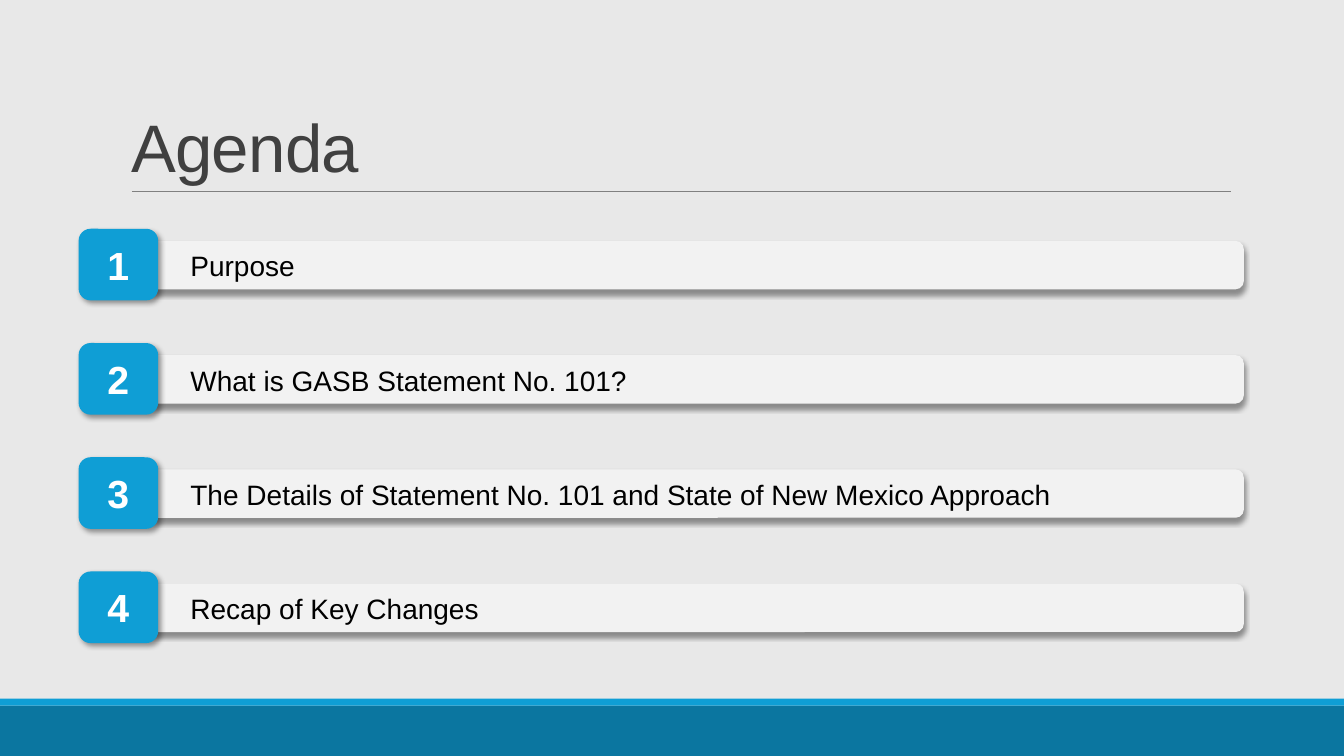
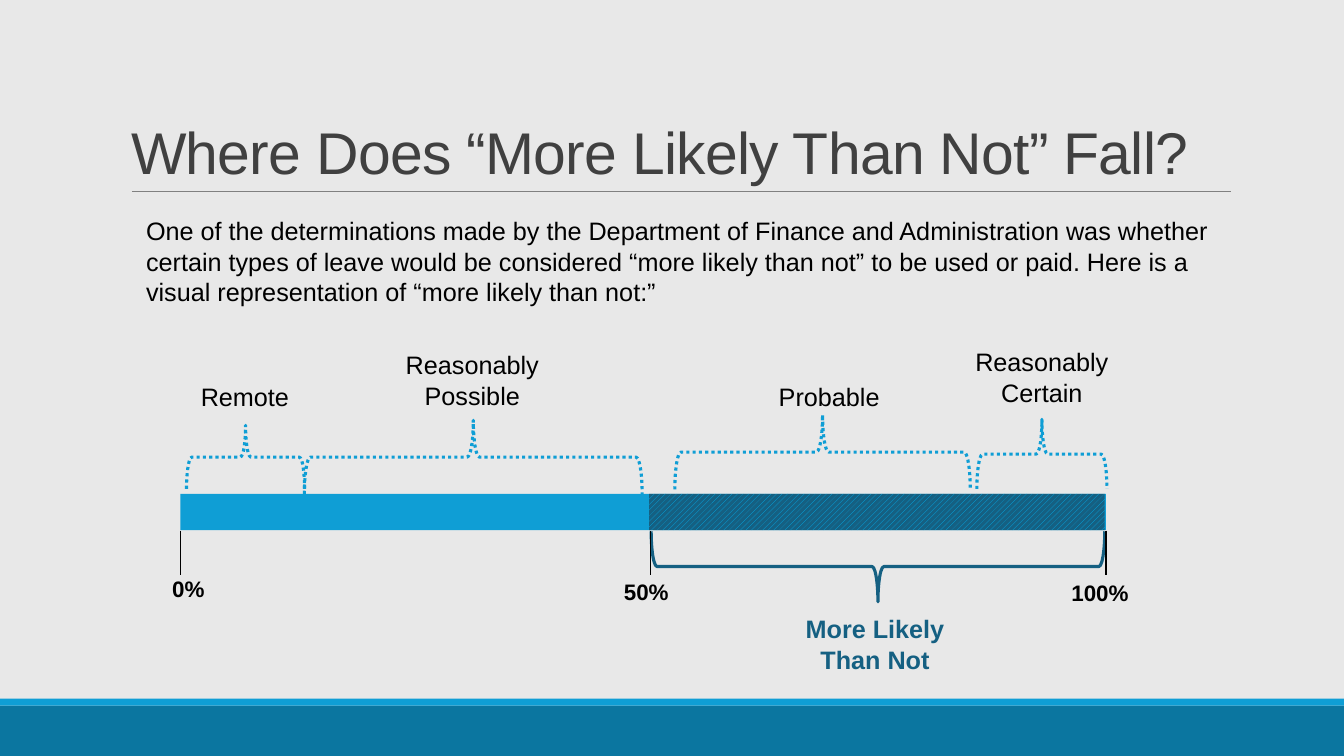
from dataclasses import dataclass

from lxml import etree
from pptx import Presentation
from pptx import util as u
from pptx.dml.color import RGBColor
from pptx.enum import dml, shapes, text
from pptx.oxml.ns import qn

SLIDE_WIDTH, SLIDE_HEIGHT = u.Inches(13.33), u.Inches(7.5)
FONT = "Arial"
BACKGROUND, PANEL, WHITE, BLACK = "E8E8E8", "F2F2F2", "FFFFFF", "000000"
BLUE, BAND_BLUE, DEEP_BLUE, HATCH_BLUE = "0F9ED5", "0B76A0", "156082", "00B0F0"
TITLE_GREY, RULE_GREY = "404040", "808080"
RECTANGLE = shapes.MSO_SHAPE.RECTANGLE
ROUNDED = shapes.MSO_SHAPE.ROUNDED_RECTANGLE
CENTER, LEFT = text.PP_ALIGN.CENTER, text.PP_ALIGN.LEFT


@dataclass(frozen=True)
class Box:
    """A frame in percent of the slide's width and height."""
    left: float
    top: float
    width: float
    height: float

    def emu(self) -> tuple:
        return (across(self.left), down(self.top),
                across(self.width), down(self.height))


@dataclass(frozen=True)
class AgendaItem:
    wording: str
    width: float = 35.78


@dataclass(frozen=True)
class Label:
    wording: str
    box: Box


@dataclass(frozen=True)
class Likelihood:
    """A span of the scale, marked by a brace and named by a label."""
    label: Label
    brace: Box
    color: str = BLUE
    points_down: bool = False


@dataclass(frozen=True)
class Tick:
    left: float
    label: Label


AGENDA_PITCH = 15.11
AGENDA = (
    AgendaItem("Purpose"),
    AgendaItem("What is GASB Statement No. 101?"),
    AgendaItem("The Details of Statement No. 101 and State of New Mexico Approach", 70.5),
    AgendaItem("Recap of Key Changes"),
)

INTRO = Label(
    "One of the determinations made by the Department of Finance and Administration "
    "was whether certain types of leave would be considered “more likely than not” to "
    "be used or paid. Here is a visual representation of “more likely than not:”",
    Box(10.13, 27.87, 81.08, 13.47))
SCALE = Box(13.43, 65.33, 68.85, 4.8)
UPPER_HALF = Box(48.3, 65.33, 33.9, 4.8)
TICK_TOP, TICK_BOTTOM = 70.2, 76
TICKS = (
    Tick(13.43, Label("0%", Box(12.08, 75.47, 4.65, 4.93))),
    Tick(48.38, Label("50%", Box(45.68, 75.87, 5.55, 4.93))),
    Tick(82.28, Label("100%", Box(78.98, 76, 6.45, 4.93))),
)
LIKELIHOODS = (
    Likelihood(Label("Remote", Box(13.8, 49.73, 8.85, 5.33)),
               Box(13.88, 56.27, 8.78, 8.4)),
    Likelihood(Label("Reasonably Possible", Box(28.8, 45.6, 12.68, 9.47)),
               Box(22.65, 55.6, 25.13, 9.73)),
    Likelihood(Label("Probable", Box(55.58, 49.73, 12.23, 5.33)),
               Box(50.21, 54.87, 21.98, 9.87)),
    Likelihood(Label("Reasonably Certain", Box(70.05, 45.2, 14.93, 9.47)),
               Box(72.68, 55.47, 9.68, 9.2)),
    Likelihood(Label("More Likely Than Not", Box(58.73, 80.53, 12.75, 9.47)),
               Box(48.45, 70.27, 33.75, 9.33), DEEP_BLUE, points_down=True),
)


def across(share: float) -> int:
    return round(SLIDE_WIDTH * share / 100)


def down(share: float) -> int:
    return round(SLIDE_HEIGHT * share / 100)


def rgb(color: str) -> RGBColor:
    return RGBColor.from_string(color)


def write(shape, wording: str, size: float, color: str = BLACK,
          bold: bool = False, align=LEFT, anchor=text.MSO_ANCHOR.TOP):
    """Set the shape's only paragraph and return its span."""
    frame = shape.text_frame
    frame_format = {"word_wrap": True, "vertical_anchor": anchor,
                    "auto_size": text.MSO_AUTO_SIZE.NONE}
    for name, value in frame_format.items():
        setattr(frame, name, value)
    para = frame.paragraphs[0]
    para.alignment = align
    span = para.add_run()
    span.text = wording
    font_format = {"name": FONT, "size": u.Pt(size), "bold": bold}
    for name, value in font_format.items():
        setattr(span.font, name, value)
    span.font.color.rgb = rgb(color)
    return span


def add_label(page, label: Label, size: float, **style) -> None:
    write(page.shapes.add_textbox(*label.box.emu()), label.wording, size, **style)


def add_block(page, kind, box: Box, color: str):
    """Add a filled shape with no outline and no shadow."""
    block = page.shapes.add_shape(kind, *box.emu())
    block.shadow.inherit = False
    block.fill.solid()
    block.fill.fore_color.rgb = rgb(color)
    block.line.fill.background()
    return block


def add_shadow(block, angle: int) -> None:
    effects = block._element.spPr.find(qn("a:effectLst"))
    shadow = etree.SubElement(effects, qn("a:outerShdw"), {
        "blurRad": str(u.Pt(4)), "dist": str(u.Pt(3)),
        "dir": str(angle * 60000), "algn": "ctr", "rotWithShape": "0"})
    tint = etree.SubElement(shadow, qn("a:srgbClr"), val=BLACK)
    etree.SubElement(tint, qn("a:alpha"), val="40000")


def add_line(page, start: tuple, end: tuple, color: str, weight: float) -> None:
    line = page.shapes.add_connector(
        shapes.MSO_CONNECTOR.STRAIGHT,
        across(start[0]), down(start[1]), across(end[0]), down(end[1]))
    line.line.color.rgb = rgb(color)
    line.line.width = u.Pt(weight)
    etree.SubElement(line._element.spPr, qn("a:effectLst"))


def add_brace(page, likelihood: Likelihood) -> None:
    """Turn a left brace so that it fills the given frame lying down."""
    left, top, width, height = likelihood.brace.emu()
    inset = (width - height) // 2
    brace = page.shapes.add_shape(shapes.MSO_SHAPE.LEFT_BRACE,
                                  left + inset, top - inset, height, width)
    brace.shadow.inherit = False
    brace.fill.background()
    brace.line.color.rgb = rgb(likelihood.color)
    brace.line.width = u.Pt(2.25)
    if likelihood.points_down:
        brace.rotation = 270
    else:
        brace.rotation = 90
        brace.line.dash_style = dml.MSO_LINE.ROUND_DOT


def add_page(deck, title: str, title_size: float, title_width: float):
    """Add a slide with the shared bands, rule and title style."""
    page = deck.slides.add_slide(deck.slide_layouts.get_by_name("Title Only"))
    add_block(page, RECTANGLE, Box(0, 93.33, 100, 6.67), BAND_BLUE)
    add_block(page, RECTANGLE, Box(0, 92.4, 100, 0.93), BLUE)
    add_line(page, (9.82, 25.33), (91.58, 25.33), RULE_GREY, 0.5)
    heading = page.shapes.title
    frame = zip(("left", "top", "width", "height"),
                Box(9, 4.13, title_width, 21.2).emu())
    for name, value in frame:
        setattr(heading, name, value)
    span = write(heading, title, title_size, TITLE_GREY,
                 anchor=text.MSO_ANCHOR.BOTTOM)
    span.font._element.set("spc", "-50")
    heading.text_frame.paragraphs[0].line_spacing = 0.85
    return page


def build_agenda(deck) -> None:
    page = add_page(deck, "Agenda", 48, 82.5)
    for row, item in enumerate(AGENDA):
        offset = row * AGENDA_PITCH
        panel = add_block(page, ROUNDED, Box(10.95, 31.87 + offset, 81.6, 6.4), PANEL)
        add_shadow(panel, 90)
        add_label(page, Label(item.wording,
                              Box(13.43, 32.27 + offset, item.width, 5.87)), 20)
        badge = add_block(page, ROUNDED, Box(5.85, 30.27 + offset, 5.92, 9.47), BLUE)
        add_shadow(badge, 45)
        write(badge, str(row + 1), 28, WHITE, bold=True, align=CENTER,
              anchor=text.MSO_ANCHOR.MIDDLE)


def build_scale(deck) -> None:
    page = add_page(deck, "Where Does “More Likely Than Not” Fall?", 42, 83.4)
    add_label(page, INTRO, 18)
    add_block(page, RECTANGLE, SCALE, BLUE)
    for likelihood in LIKELIHOODS:
        add_brace(page, likelihood)
        emphasis = likelihood.points_down
        add_label(page, likelihood.label, 18, align=CENTER, bold=emphasis,
                  color=likelihood.color if emphasis else BLACK)
    for tick in TICKS:
        add_line(page, (tick.left, TICK_TOP), (tick.left, TICK_BOTTOM), BLACK, 1)
        add_label(page, tick.label, 16, bold=True)
    hatch = add_block(page, RECTANGLE, UPPER_HALF, DEEP_BLUE).fill
    hatch.patterned()
    hatch.pattern = dml.MSO_PATTERN.WIDE_UPWARD_DIAGONAL
    hatch.fore_color.rgb = rgb(HATCH_BLUE)
    hatch.back_color.rgb = rgb(DEEP_BLUE)


def main() -> None:
    deck = Presentation()
    deck.slide_width, deck.slide_height = SLIDE_WIDTH, SLIDE_HEIGHT
    backdrop = deck.slide_master.background.fill
    backdrop.solid()
    backdrop.fore_color.rgb = rgb(BACKGROUND)
    build_agenda(deck)
    build_scale(deck)
    deck.save("out.pptx")


if __name__ == "__main__":
    main()
